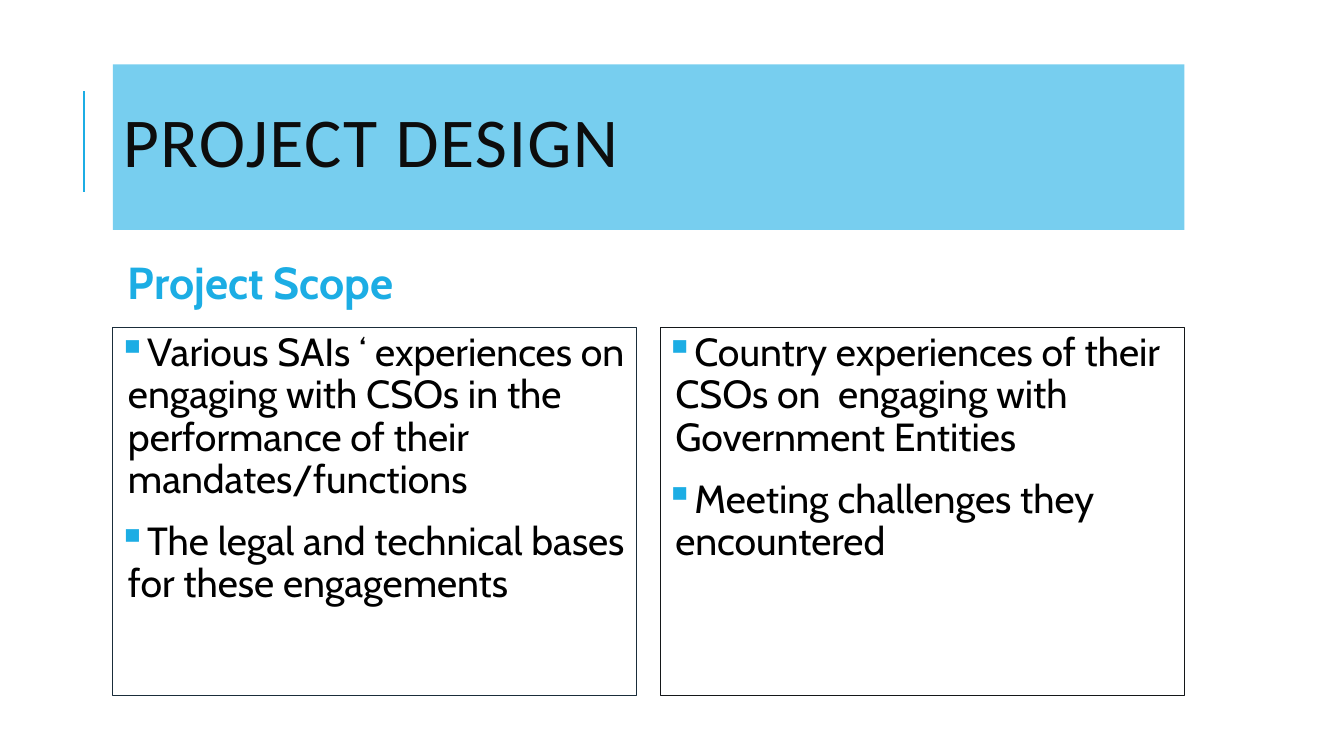
"""Builds the Project Design slide with a title band and two bulleted columns."""
from lxml.etree import SubElement
from pptx import Presentation
from pptx.dml.color import RGBColor as Color
from pptx.enum.shapes import MSO_CONNECTOR as Connector, MSO_SHAPE as Shape
from pptx.enum.text import MSO_ANCHOR as Anchor, PP_ALIGN as Align
from pptx.oxml.ns import qn
from pptx.util import Pt

COLORS = {
    "accent": "1CADE4",
    "band": "77CEEF",
    "title": "0D0D0D",
    "body": "000000",
    "left_border": "1A2D3A",
    "right_border": "141719",
}
LEFT, COLUMN_WIDTH, COLUMN_GAP = 80.64, 374.4, 16.56
BAND_WIDTH = 2 * COLUMN_WIDTH + COLUMN_GAP
COLUMNS = [
    ("left_border", [
        "Various SAIs ‘ experiences on engaging with CSOs in the performance of their mandates/functions",
        "The legal and technical bases for these engagements",
    ]),
    ("right_border", [
        "Country experiences of their CSOs on  engaging with Government Entities",
        "Meeting challenges they encountered",
    ]),
]


def color(name):
    return Color.from_string(COLORS[name])


def apply(target, values):
    for name, value in values.items():
        setattr(target, name, value)


class SlideBuilder:
    def __init__(self, page):
        self.page = page
        self.formats = {
            "title": {"name": "Calibri", "size": Pt(50)},
            "heading": {"name": "Cabin", "size": Pt(32), "bold": True},
            "body": {"name": "Cabin", "size": Pt(28)},
        }
        self.spacing = {
            "title": {"line_spacing": 0.8},
            "heading": {"line_spacing": 0.9},
            "body": {"line_spacing": 0.9, "space_before": Pt(12), "space_after": Pt(2)},
        }

    def accent_line(self, x, top, bottom):
        line = self.page.shapes.add_connector(
            Connector.STRAIGHT, Pt(x), Pt(bottom), Pt(x), Pt(top))
        line.line.color.rgb = color("accent")
        line.line.width = Pt(1.5)
        SubElement(line._element.spPr, qn("a:effectLst"))

    def panel(self, left, top, width, height, fill=None, border=None):
        box = self.page.shapes.add_shape(
            Shape.RECTANGLE, Pt(left), Pt(top), Pt(width), Pt(height))
        box.shadow.inherit = False
        if fill:
            box.fill.solid()
            box.fill.fore_color.rgb = color(fill)
        else:
            box.fill.background()
        if border:
            box.line.color.rgb = color(border)
            box.line.width = Pt(0.75)
        else:
            box.line.fill.background()
        return box

    def text_box(self, left, top, width, height):
        return self.page.shapes.add_textbox(Pt(left), Pt(top), Pt(width), Pt(height))

    def fill_text(self, box, texts, style, ink, anchor, side=7.2):
        frame = box.text_frame
        apply(frame, {
            "word_wrap": True, "vertical_anchor": anchor,
            "margin_left": Pt(side), "margin_right": Pt(side),
            "margin_top": Pt(3.6), "margin_bottom": Pt(3.6),
        })
        for index, text in enumerate(texts):
            para = frame.add_paragraph() if index else frame.paragraphs[0]
            apply(para, {"alignment": Align.LEFT, **self.spacing[style]})
            span = para.add_run()
            span.text = text
            apply(span.font, self.formats[style])
            span.font.color.rgb = color(ink)
        return frame.paragraphs

    def bullet(self, para):
        props = para._p.get_or_add_pPr()
        props.set("marL", str(Pt(7.2)))
        props.set("indent", str(-Pt(7.2)))
        tint = SubElement(props, qn("a:buClr"))
        SubElement(tint, qn("a:srgbClr"), val=COLORS["accent"])
        SubElement(props, qn("a:buChar"), char="▪")

    def title(self, text):
        band = self.panel(LEFT, 46.08, BAND_WIDTH, 118.08, fill="band")
        para = self.fill_text(band, [text], "title", "title", Anchor.MIDDLE)[0]
        para.runs[0].font._element.set("spc", "100")

    def heading(self, text):
        box = self.text_box(LEFT, 171.36, COLUMN_WIDTH, 64.8)
        self.fill_text(box, [text], "heading", "accent", Anchor.MIDDLE, side=10.8)

    def column(self, index, border, texts):
        left = LEFT + index * (COLUMN_WIDTH + COLUMN_GAP)
        box = self.panel(left, 234, COLUMN_WIDTH, 262.8, border=border)
        for para in self.fill_text(box, texts, "body", "body", Anchor.TOP, side=3.6):
            self.bullet(para)


def main():
    deck = Presentation()
    apply(deck, {"slide_width": Pt(960), "slide_height": Pt(540)})
    builder = SlideBuilder(deck.slides.add_slide(deck.slide_layouts[6]))
    builder.accent_line(60, 65, 137)
    builder.title("PROJECT DESIGN")
    builder.heading("Project Scope")
    for index, (border, texts) in enumerate(COLUMNS):
        builder.column(index, border, texts)
    deck.save("out.pptx")


if __name__ == "__main__":
    main()
